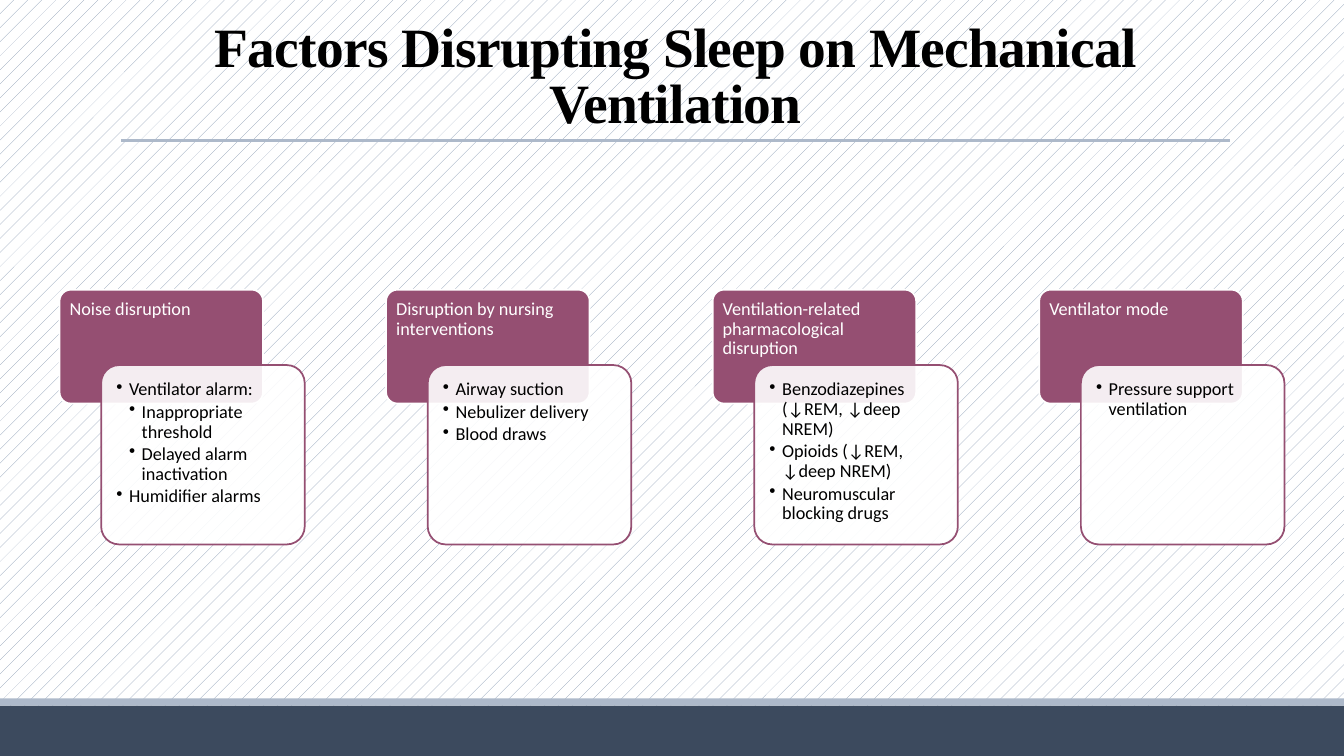
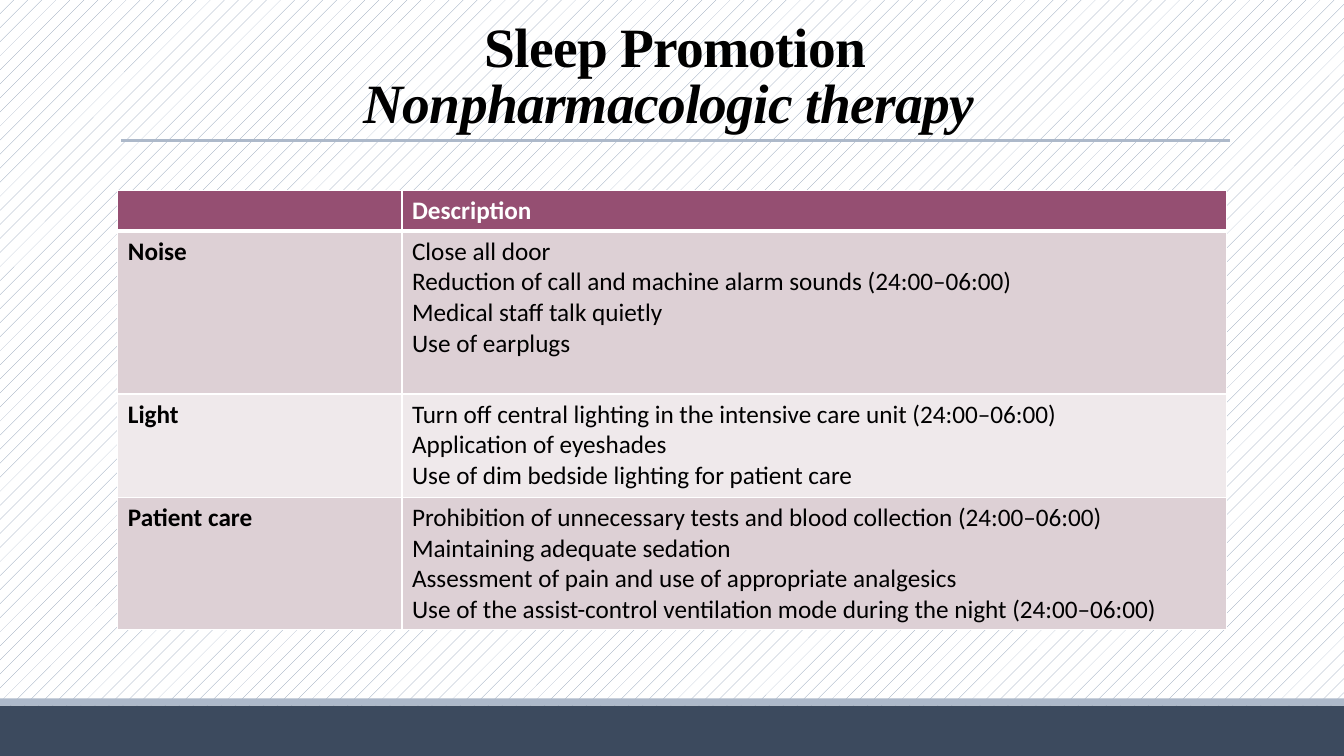
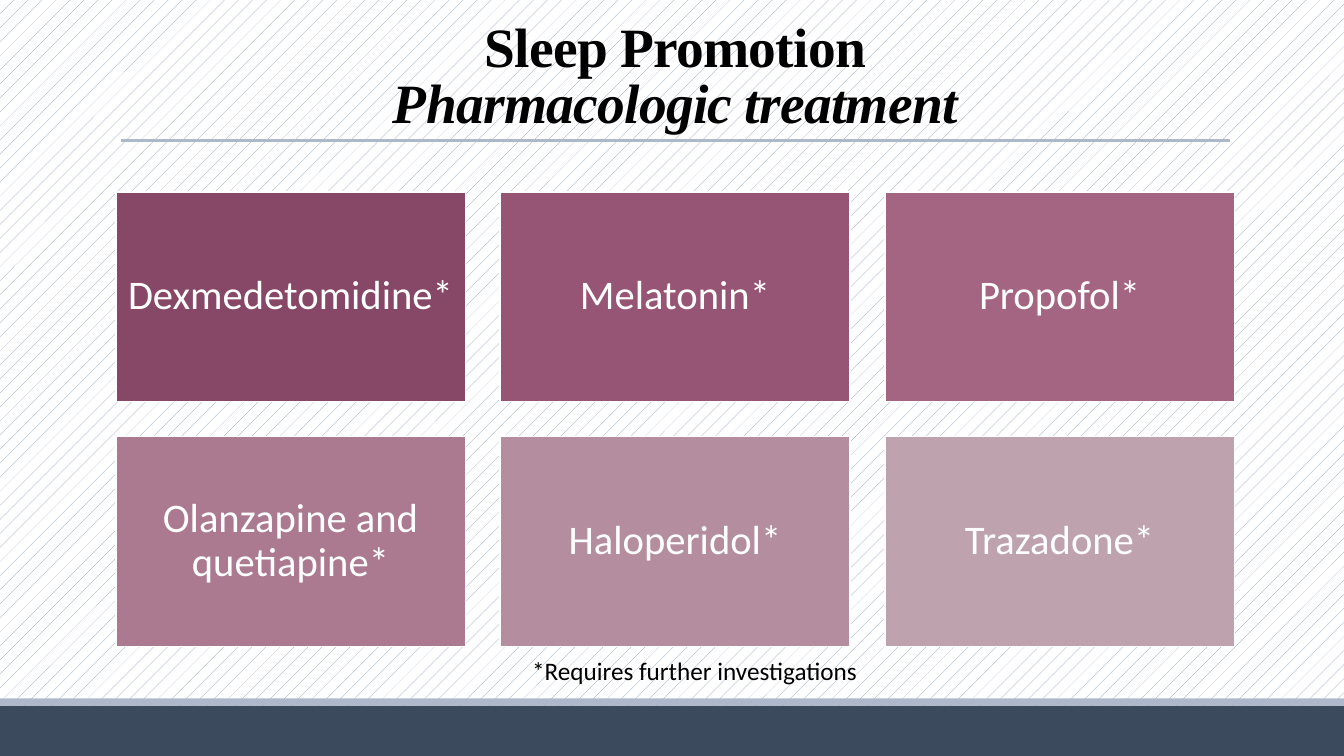
from dataclasses import dataclass

from lxml import etree
from pptx import Presentation
from pptx.dml.color import RGBColor
from pptx.enum.dml import MSO_PATTERN
from pptx.enum.shapes import MSO_CONNECTOR, MSO_SHAPE
from pptx.enum.text import MSO_ANCHOR, MSO_AUTO_SIZE, PP_ALIGN
from pptx.oxml.ns import qn
from pptx.util import Cm, Pt

RECT, ROUNDED = MSO_SHAPE.RECTANGLE, MSO_SHAPE.ROUNDED_RECTANGLE
STRAIGHT = MSO_CONNECTOR.STRAIGHT
TOP, MIDDLE, BOTTOM = MSO_ANCHOR.TOP, MSO_ANCHOR.MIDDLE, MSO_ANCHOR.BOTTOM
LEFT, CENTER = PP_ALIGN.LEFT, PP_ALIGN.CENTER

# Content
FACTORS_TITLE = "Factors Disrupting Sleep on Mechanical Ventilation"
FACTORS = [  # heading, [(level, point)]
    ("Noise disruption", [
        (1, "Ventilator alarm:"),
        (2, "Inappropriate threshold"),
        (2, "Delayed alarm inactivation"),
        (1, "Humidifier alarms")]),
    ("Disruption by nursing interventions", [
        (1, "Airway suction"),
        (1, "Nebulizer delivery"),
        (1, "Blood draws")]),
    ("Ventilation-related pharmacological disruption", [
        (1, "Benzodiazepines (↓REM, ↓deep NREM)"),
        (1, "Opioids (↓REM, ↓deep NREM)"),
        (1, "Neuromuscular blocking drugs")]),
    ("Ventilator mode", [(1, "Pressure support ventilation")]),
]

PROMOTION_TITLE = "Sleep Promotion"
THERAPY_SUBTITLE = "Nonpharmacologic therapy "
THERAPY_HEADER = ("", ["Description"])
THERAPIES = [  # row height in cm, topic, measures
    (4.11, "Noise", [
        "Close all door",
        "Reduction of call and machine alarm sounds (24:00–06:00)",
        "Medical staff talk quietly",
        "Use of earplugs"]),
    (2.6, "Light", [
        "Turn off central lighting in the intensive care unit (24:00–06:00)",
        "Application of eyeshades",
        "Use of dim bedside lighting for patient care"]),
    (3.34, "Patient care", [
        "Prohibition of unnecessary tests and blood collection (24:00–06:00)",
        "Maintaining adequate sedation",
        "Assessment of pain and use of appropriate analgesics",
        "Use of the assist-control ventilation mode during the night (24:00–06:00)"]),
]

DRUG_SUBTITLE = "Pharmacologic treatment"
DRUGS = [
    ("Dexmedetomidine*", "874867"),
    ("Melatonin*", "975575"),
    ("Propofol*", "A46583"),
    ("Olanzapine and quetiapine*", "AB7A91"),
    ("Haloperidol*", "B48E9F"),
    ("Trazadone*", "BEA2AE"),
]
DRUG_NOTE = "*Requires further investigations"


@dataclass(frozen=True)
class Theme:
    title_font: str = "Times New Roman"
    body_font: str = "Calibri"
    text: str = "000000"
    white: str = "FFFFFF"
    hatch: str = "8496B0"
    band: str = "3C4A5E"
    rule: str = "ADB9CA"
    accent: str = "954F72"
    row_tints: tuple = ("DDD0D5", "EFE9EB")
    title_size: float = 39.6
    card_size: int = 13
    table_size: int = 18
    drug_size: int = 29


THEME = Theme()
WIDTH, HEIGHT = 33.87, 19.05  # cm


# Shared helpers; all lengths come in as cm
def rgb(code):
    return RGBColor.from_string(code)


def style(paragraph, size, color, bold=False, font=THEME.body_font):
    for run in paragraph.runs:
        run.font.name, run.font.size, run.font.bold = font, Pt(size), bold
        run.font.color.rgb = rgb(color)


def set_frame(frame, anchor, inset):
    frame.word_wrap = True
    frame.vertical_anchor = anchor
    frame.margin_left = frame.margin_right = Cm(inset)
    frame.margin_top = frame.margin_bottom = Cm(inset)


def add_box(slide, kind, box, fill, line=None):
    shape = slide.shapes.add_shape(kind, *map(Cm, box))
    shape.shadow.inherit = False
    shape.fill.solid()
    shape.fill.fore_color.rgb = rgb(fill)
    if line:
        shape.line.color.rgb = rgb(line)
        shape.line.width = Pt(1.25)
    else:
        shape.line.fill.background()
    if kind == ROUNDED:
        shape.adjustments[0] = 0.1
    return shape


def add_label(shape, text, size, anchor, align, inset):
    set_frame(shape.text_frame, anchor, inset)
    label = shape.text_frame.paragraphs[0]
    label.text, label.alignment, label.line_spacing = text, align, 0.9
    style(label, size, THEME.white)


def set_opacity(shape, percent):
    color = shape.fill._xPr.find(qn("a:solidFill"))[0]
    etree.SubElement(color, qn("a:alpha")).set("val", str(percent * 1000))


def add_bullet(paragraph, level):
    hanging = Cm(0.32)
    properties = paragraph._p.get_or_add_pPr()
    properties.set("marL", str(hanging * level))
    properties.set("indent", str(-hanging))
    etree.SubElement(properties, qn("a:buChar")).set("char", "•")


def set_borders(cell, top, bottom):
    properties = cell._tc.get_or_add_tcPr()
    for side, points in (("L", 1), ("R", 1), ("T", top), ("B", bottom)):
        line = etree.SubElement(properties, qn(f"a:ln{side}"), w=str(Pt(points)))
        fill = etree.SubElement(line, qn("a:solidFill"))
        etree.SubElement(fill, qn("a:srgbClr"), val=THEME.white)


def new_slide(prs, title, subtitle=None):
    """Hatched background, footer bands, title and the rule under it."""
    slide = prs.slides.add_slide(prs.slide_layouts[6])
    backdrop = slide.background.fill
    backdrop.patterned()
    backdrop.pattern = MSO_PATTERN.PERCENT_5
    backdrop.fore_color.rgb = rgb(THEME.hatch)
    backdrop.back_color.rgb = rgb(THEME.white)

    add_box(slide, RECT, (0, 17.78, WIDTH, 1.27), THEME.band)
    add_box(slide, RECT, (0, 17.6, WIDTH, 0.18), THEME.rule)
    rule = slide.shapes.add_connector(
        STRAIGHT, Cm(3.05), Cm(3.53), Cm(30.99), Cm(3.53))
    rule.line.color.rgb = rgb(THEME.rule)
    rule.line.width = Pt(2.25)
    etree.SubElement(rule._element.spPr, qn("a:effectLst"))

    heading = slide.shapes.add_textbox(Cm(3.05), Cm(0.79), Cm(27.94), Cm(2.74))
    set_frame(heading.text_frame, BOTTOM, 0.13)
    line = heading.text_frame.paragraphs[0]
    line.text = f"{title}\v{subtitle}" if subtitle else title
    line.alignment, line.line_spacing = CENTER, 0.85
    style(line, THEME.title_size, THEME.text, True, THEME.title_font)
    for run in line.runs:
        run._r.get_or_add_rPr().set("spc", "-50")
    if subtitle:
        line.runs[-1].font.italic = True
    return slide


# Slides
def build_factors(prs):
    slide = new_slide(prs, FACTORS_TITLE)
    left, top, step, width = 1.5, 7.3, 8.23, 5.13
    for index, (heading, points) in enumerate(FACTORS):
        x = left + index * step
        tab = add_box(slide, ROUNDED, (x, top, width, 2.87),
                      THEME.accent, THEME.white)
        add_label(tab, heading, THEME.card_size, TOP, LEFT, 0.17)

        card = add_box(slide, ROUNDED, (x + 1.05, top + 1.9, width, 4.52),
                       THEME.white, THEME.accent)
        set_opacity(card, 90)
        set_frame(card.text_frame, TOP, 0.25)
        card.text_frame.text = "\n".join(text for _, text in points)
        for (level, _), point in zip(points, card.text_frame.paragraphs):
            point.alignment, point.line_spacing = LEFT, 0.9
            point.space_after = Pt(2)
            add_bullet(point, level)
            style(point, THEME.card_size, THEME.text)


def build_therapy(prs):
    slide = new_slide(prs, PROMOTION_TITLE, THERAPY_SUBTITLE)
    rows = [(1.02, *THERAPY_HEADER)] + THERAPIES
    widths = (7.16, 20.78)
    table = slide.shapes.add_table(
        len(rows), len(widths), Cm(2.97), Cm(4.8), Cm(sum(widths)),
        Cm(sum(height for height, _, _ in rows))).table
    table.horz_banding = False
    for column, width in zip(table.columns, widths):
        column.width = Cm(width)
    for r, (height, topic, measures) in enumerate(rows):
        table.rows[r].height = Cm(height)
        header = r == 0
        fill = THEME.accent if header else THEME.row_tints[(r - 1) % 2]
        for c, text in enumerate((topic, "\n".join(measures))):
            cell = table.cell(r, c)
            set_borders(cell, 3 if r == 1 else 1, 3 if header else 1)
            cell.fill.solid()
            cell.fill.fore_color.rgb = rgb(fill)
            cell.text_frame.text = text
            for line in cell.text_frame.paragraphs:
                style(line, THEME.table_size,
                      THEME.white if header else THEME.text, header or c == 0)


def build_drugs(prs):
    slide = new_slide(prs, PROMOTION_TITLE, DRUG_SUBTITLE)
    left, top, width, height, gap, columns = 2.92, 4.83, 8.81, 5.29, 0.88, 3
    for index, (drug, fill) in enumerate(DRUGS):
        row, column = divmod(index, columns)
        tile = add_box(slide, RECT, (left + column * (width + gap),
                                     top + row * (height + gap), width, height),
                       fill, THEME.white)
        add_label(tile, drug, THEME.drug_size, MIDDLE, CENTER, 0.28)

    note = slide.shapes.add_textbox(Cm(13.16), Cm(16.38), Cm(width), Cm(1.02))
    note.text_frame.text = DRUG_NOTE
    note.text_frame.word_wrap = False
    note.text_frame.auto_size = MSO_AUTO_SIZE.SHAPE_TO_FIT_TEXT
    style(note.text_frame.paragraphs[0], THEME.table_size, THEME.text)


def main():
    prs = Presentation()
    prs.slide_width, prs.slide_height = Cm(WIDTH), Cm(HEIGHT)
    build_factors(prs)
    build_therapy(prs)
    build_drugs(prs)
    prs.save("out.pptx")


if __name__ == "__main__":
    main()
